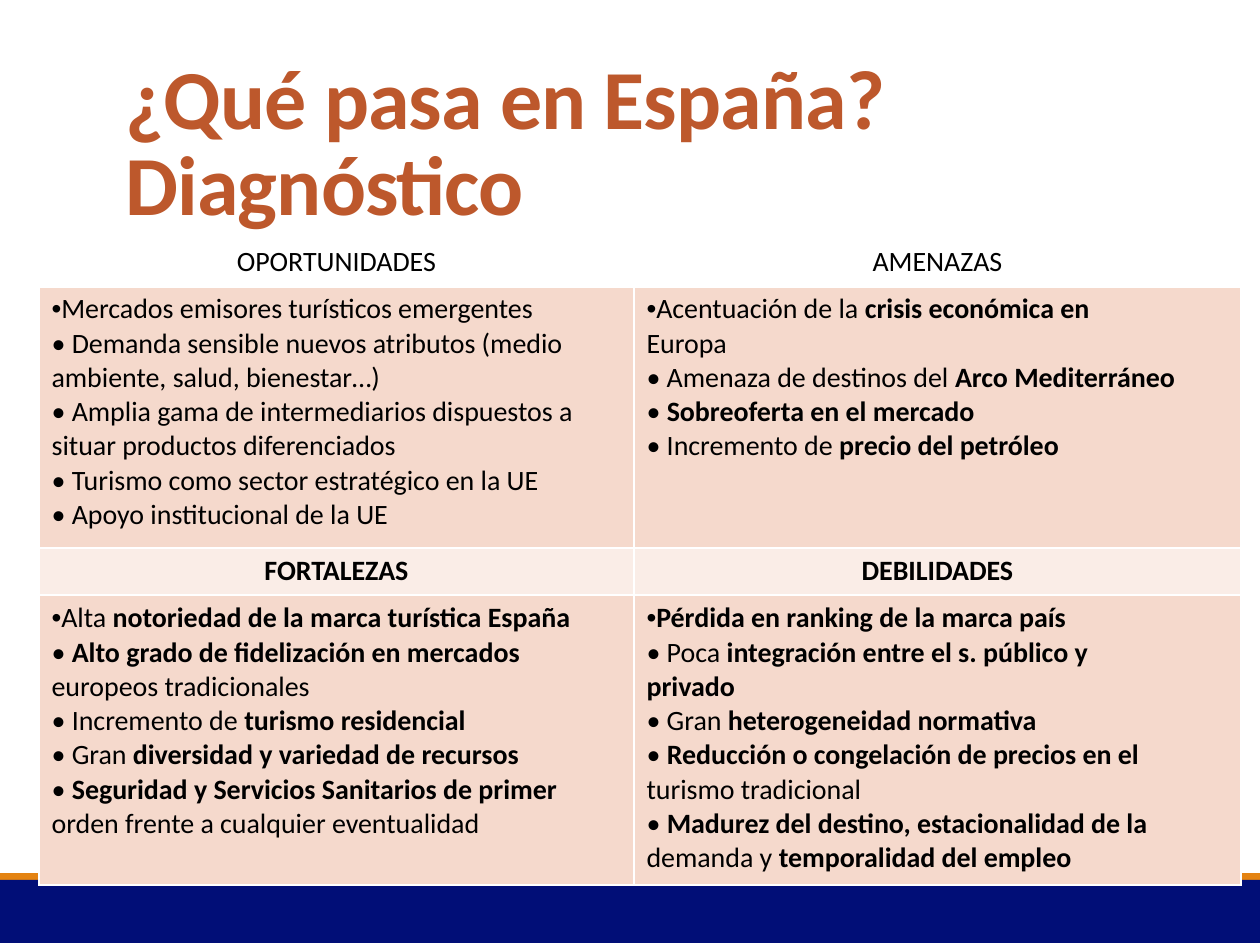
from lxml import etree
from pptx import Presentation
from pptx import util as u
from pptx.dml.color import RGBColor
from pptx.enum import shapes, text
from pptx.oxml.ns import qn

PX = 914400 / 126  # EMU in one px
FONT = "Calibri"
PEACH, PALE, WHITE = "F5D9CC", "FAEDE7", "FFFFFF"

# Each row: fill, height, cells. Asterisks switch bold on and off.
ROWS = [
    (None, 47, [["OPORTUNIDADES"], ["AMENAZAS"]]),
    (PEACH, 262, [
        ["Mercados emisores turísticos emergentes",
         "• Demanda sensible nuevos atributos (medio",
         "ambiente, salud, bienestar…)",
         "• Amplia gama de intermediarios dispuestos a",
         "situar productos diferenciados",
         "• Turismo como sector estratégico en la UE",
         "• Apoyo institucional de la UE"],
        ["Acentuación de la *crisis económica en*",
         "Europa",
         "• Amenaza de destinos del *Arco Mediterráneo*",
         "• *Sobreoferta en el mercado*",
         "• Incremento de *precio del petróleo*"]]),
    (PALE, 47, [["*FORTALEZAS*"], ["*DEBILIDADES*"]]),
    (PEACH, 290, [
        ["Alta *notoriedad de la marca turística España*",
         "• *Alto grado de fidelización en mercados*",
         "europeos tradicionales",
         "• Incremento de *turismo residencial*",
         "• Gran *diversidad y variedad de recursos*",
         "• *Seguridad y Servicios Sanitarios de primer *"
         "orden frente a cualquier eventualidad"],
        ["*Pérdida en ranking de la marca país*",
         "• Poca *integración entre el s. público y*",
         "*privado*",
         "• Gran *heterogeneidad normativa*",
         "• *Reducción o congelación de precios en el*",
         "turismo tradicional",
         "• *Madurez del destino, estacionalidad de la*",
         "demanda y *temporalidad del empleo*"]]),
]


def px(n):
    return u.Emu(round(n * PX))


def rgb(code):
    return RGBColor.from_string(code)


def add_run(para, words, size, color, bold):
    run = para.add_run()
    run.text = words
    font = run.font
    font.name, font.size, font.bold = FONT, u.Pt(size), bold
    font.color.rgb = rgb(color)
    return run


def add_bar(slide, left, top, width, height, color):
    bar = slide.shapes.add_shape(shapes.MSO_SHAPE.RECTANGLE,
                                 px(left), px(top), px(width), px(height))
    bar.shadow.inherit = False
    bar.fill.solid()
    bar.fill.fore_color.rgb = rgb(color)
    bar.line.fill.background()


def add_foot(slide, left, top, width):
    add_bar(slide, left, top, width, 9, "E48312")
    add_bar(slide, left, top + 7, width, 63, "010E77")


def add_rule(slide, left, top, width):
    line = slide.shapes.add_connector(shapes.MSO_CONNECTOR.STRAIGHT,
                                      px(left), px(top), px(left + width), px(top))
    line.line.color.rgb = rgb("808080")
    line.line.width = u.Pt(0.5)
    etree.SubElement(line._element.spPr, qn("a:effectLst"))


def add_title(slide, left, top, width, height):
    title = slide.shapes.title
    title.left, title.top = px(left), px(top)
    title.width, title.height = px(width), px(height)
    frame = title.text_frame
    frame.word_wrap = True
    frame.auto_size = text.MSO_AUTO_SIZE.NONE
    frame.vertical_anchor = text.MSO_ANCHOR.BOTTOM
    para = frame.paragraphs[0]
    para.alignment = text.PP_ALIGN.LEFT
    para.line_spacing = 0.85
    run = add_run(para, "¿Qué pasa en España? Diagnóstico", 48, "BD582C", True)
    run._r.get_or_add_rPr().set("spc", "-50")


def add_edges(cell, base):
    """White borders; base is the width of the bottom one in points."""
    props = cell._tc.get_or_add_tcPr()
    for i, (side, wide) in enumerate(zip("LRTB", (1, 1, 1, base))):
        edge = etree.Element(qn("a:ln" + side), w=str(u.Pt(wide)))
        fill = etree.SubElement(edge, qn("a:solidFill"))
        etree.SubElement(fill, qn("a:srgbClr"), val=WHITE)
        props.insert(i, edge)


def add_bullet(para):
    props = para._p.get_or_add_pPr()
    props.set("marL", "0")
    props.set("indent", "0")
    etree.SubElement(props, qn("a:buFont"), typeface="Arial")
    etree.SubElement(props, qn("a:buChar"), char="•")


def fill_cell(cell, lines, color):
    if color:
        cell.fill.solid()
        cell.fill.fore_color.rgb = rgb(color)
    else:
        cell.fill.background()
    add_edges(cell, 1 if color else 3)
    frame = cell.text_frame
    for i, line in enumerate(lines):
        para = frame.add_paragraph() if i else frame.paragraphs[0]
        if len(lines) == 1:
            para.alignment = text.PP_ALIGN.CENTER
        elif i == 0:
            add_bullet(para)
        for j, part in enumerate(line.split("*")):
            if part:
                add_run(para, part, 16, "000000", j % 2 == 1)


def add_grid(slide, left, top, widths):
    height = sum(row[1] for row in ROWS)
    table = slide.shapes.add_table(len(ROWS), len(widths), px(left), px(top),
                                   px(sum(widths)), px(height)).table
    table.first_row = table.horz_banding = False
    for col, width in zip(table.columns, widths):
        col.width = px(width)
    for row, (color, high, cells) in zip(table.rows, ROWS):
        row.height = px(high)
        for cell, lines in zip(row.cells, cells):
            fill_cell(cell, lines, color)


def main():
    deck = Presentation()
    deck.slide_width, deck.slide_height = px(1260), px(945)
    slide = deck.slides.add_slide(deck.slide_layouts[5])
    add_foot(slide, 0, 873, 1260)
    add_rule(slide, 123, 239, 1030)
    add_title(slide, 113, 39, 1040, 200)
    add_grid(slide, 39, 239, [595, 607])
    deck.save("out.pptx")


if __name__ == "__main__":
    main()
